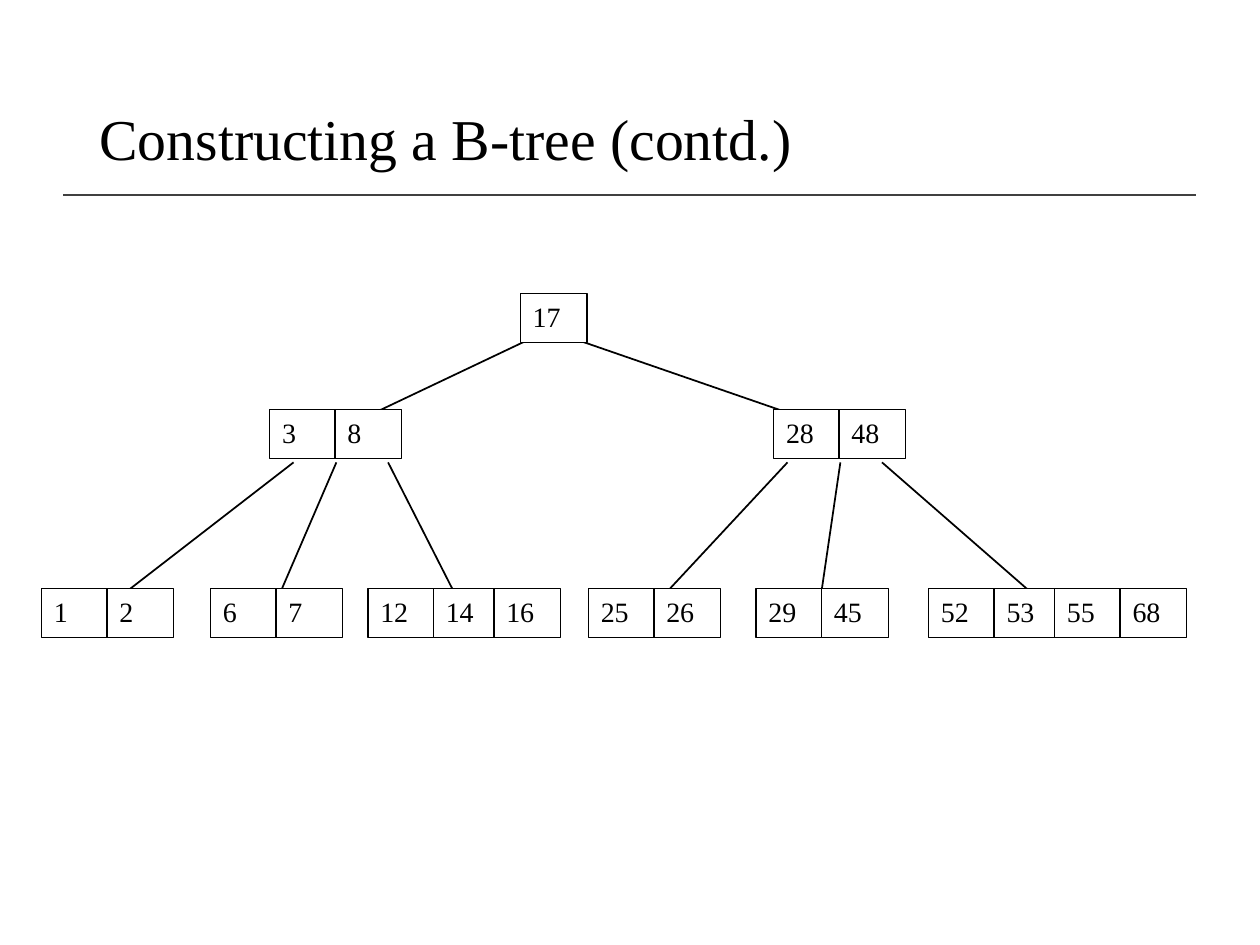
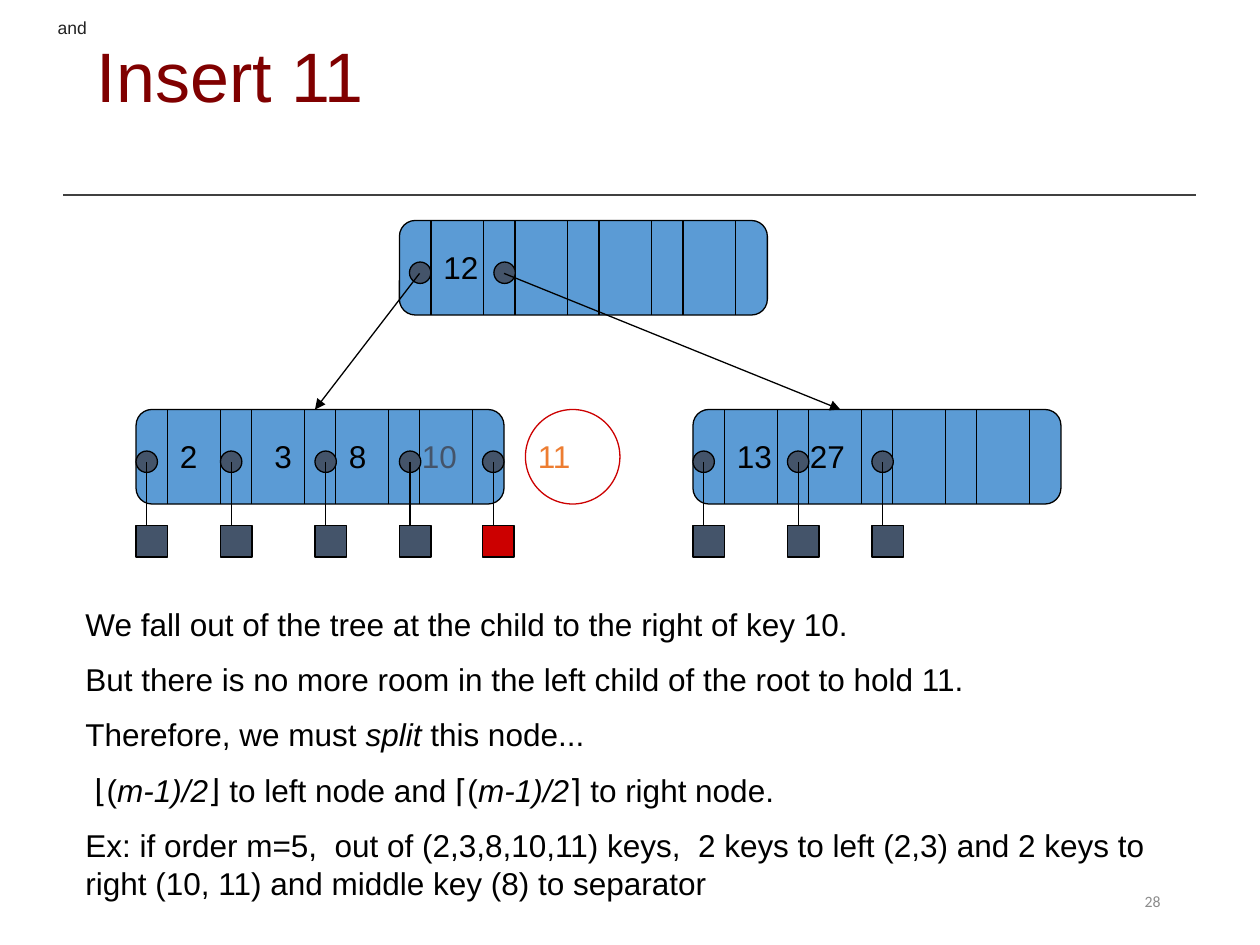
from lxml import etree
from pptx import Presentation
from pptx.dml.color import RGBColor
from pptx.enum.shapes import MSO_CONNECTOR, MSO_SHAPE as SHAPE
from pptx.enum.text import MSO_ANCHOR as ANCHOR, PP_ALIGN as ALIGN
from pptx.oxml.ns import qn
from pptx.util import Inches, Pt

BLACK, WHITE, GREY, RULE = "000000", "FFFFFF", "8C8C8C", "404040"
MAROON, RED, ORANGE = "800000", "CC0000", "ED7D31"
BLUE, SLATE, INK = "5B9BD5", "44546A", "222222"
SERIF, SANS = "Times New Roman", "Arial"

# Slide 1: each node is (left, top, keys); each edge is (x1, y1, x2, y2)
SMALL_NODES = [
    (4.13, 2.33, [17]),
    (2.14, 3.25, [3, 8]),
    (6.14, 3.25, [28, 48]),
    (0.33, 4.67, [1, 2]),
    (1.67, 4.67, [6, 7]),
    (2.92, 4.67, [12, 14, 16]),
    (4.67, 4.67, [25, 26]),
    (6, 4.67, [29, 45]),
    (7.37, 4.67, [52, 53, 55, 68]),
]
LEAF_EDGES = [(2.33, 0.83), (2.67, 2.17), (3.08, 3.67),
              (6.25, 5.17), (6.67, 6.5), (7, 8.33)]
EDGES = ([(4.25, 2.67, 2.67, 3.42), (4.5, 2.67, 6.67, 3.42)]
         + [(start, 3.67, end, 4.83) for start, end in LEAF_EDGES])
CELL_W, CELL_H, CELL_STEP, PAIR_STEP = 0.53, 0.39, 0.52, 1.0

# Slide 2: keys are (offset, text, colour), pointers are offsets in the node
BIG_NODES = [
    {"at": (1.08, 3.25), "leaves": True, "pointers": [0, 0.67, 1.42, 2.09, 2.75],
     "keys": [(0.25, "2", BLACK), (1, "3", BLACK),
              (1.59, "8", BLACK), (2.17, "10", SLATE)]},
    {"at": (3.17, 1.75), "leaves": False, "pointers": [0.08, 0.75],
     "keys": [(0.25, "12", BLACK)]},
    {"at": (5.5, 3.25), "leaves": True, "pointers": [0, 0.75, 1.42],
     "keys": [(0.25, "13", BLACK), (0.83, "27", BLACK)]},
]
RED_LEAF = 3.83
ROOT_ARROWS = [(3.33, 2.17, 2.5, 3.25), (4, 2.17, 6.67, 3.25)]
NODE_W, NODE_H, SLOTS = 2.92, 0.75, 4
DOT, LEAF = 0.17, 0.25

# Paragraphs of (text, italic) runs, with a left margin in inches
NOTES = [
    (0, [("We fall out of the tree at the child to the right of key 10.", False)]),
    (0, [("But there is no more room in the left child of the root to hold 11.", False)]),
    (0, [("Therefore, we must ", False), ("split", True), (" this node...", False)]),
    (0.07, [("⌊(", False), ("m-1)/2", True), ("⌋ to left node and ⌈(", False),
            ("m-1)/2", True), ("⌉ to right node.", False)]),
    (0, [("Ex: if order m=5,  out of (2,3,8,10,11) keys,  2 keys to left (2,3) "
          "and 2 keys to right (10, 11) and middle key (8) to separator", False)]),
]


def rgb(color):
    return RGBColor.from_string(color)


def set_font(p, size, name, color):
    p.font.size, p.font.name = Pt(size), name
    p.font.color.rgb = rgb(color)


def add_line(s, x1, y1, x2, y2, color=BLACK, width=0.75, arrow=False):
    c = s.shapes.add_connector(MSO_CONNECTOR.STRAIGHT, *map(Inches, (x1, y1, x2, y2)))
    c.line.color.rgb, c.line.width = rgb(color), Pt(width)
    if arrow:
        etree.SubElement(c.line._get_or_add_ln(), qn("a:tailEnd"), type="triangle")
    etree.SubElement(c._element.spPr, qn("a:effectLst"))


def add_shape(s, kind, x, y, w, h, fill=None, line=BLACK):
    sp = s.shapes.add_shape(kind, *map(Inches, (x, y, w, h)))
    sp.shadow.inherit = False
    if fill:
        sp.fill.solid()
        sp.fill.fore_color.rgb = rgb(fill)
    else:
        sp.fill.background()
    sp.line.color.rgb, sp.line.width = rgb(line), Pt(0.75)
    return sp


def add_text(s, x, y, w, h, text, size, name, color, wrap=False, anchor=ANCHOR.TOP):
    tf = s.shapes.add_textbox(*map(Inches, (x, y, w, h))).text_frame
    tf.word_wrap, tf.vertical_anchor = wrap, anchor
    p = tf.paragraphs[0]
    p.text = text
    set_font(p, size, name, color)
    return p


def add_slide(prs, title, box, size, name, color):
    """Blank slide with the shared rule and a title."""
    s = prs.slides.add_slide(prs.slide_layouts[6])
    add_line(s, 0.5, 1.55, 9.49, 1.55, RULE, 1)
    p = add_text(s, *box, title, size, name, color, True, ANCHOR.MIDDLE)
    p.line_spacing = 0.9
    return s


def add_small_node(s, left, top, keys):
    for i, key in enumerate(keys):
        x = left + i // 2 * PAIR_STEP + i % 2 * CELL_STEP
        sp = add_shape(s, SHAPE.RECTANGLE, x, top, CELL_W, CELL_H, WHITE)
        tf = sp.text_frame
        tf.vertical_anchor = ANCHOR.TOP
        p = tf.paragraphs[0]
        p.text, p.alignment = str(key), ALIGN.LEFT
        set_font(p, 16, SERIF, BLACK)


def add_key(s, x, y, text, color):
    add_text(s, x, y, 0.36 if len(text) == 1 else 0.51, 0.43, text, 18, SANS, color)


def add_pointer(s, x, y, leaf_color=None):
    add_shape(s, SHAPE.OVAL, x, y, DOT, DOT, SLATE)
    if leaf_color:
        add_line(s, x + DOT / 2, y + DOT / 2, x + DOT / 2, y + 0.75, arrow=True)
        add_shape(s, SHAPE.RECTANGLE, x, y + 0.59, LEAF, LEAF, leaf_color)


def add_big_node(s, node):
    x, y = node["at"]
    add_shape(s, SHAPE.ROUNDED_RECTANGLE, x, y, NODE_W, NODE_H, BLUE)
    for slot in range(SLOTS):
        for offset in (0.25, 0.67):
            divider = x + offset + slot * 2 / 3
            add_line(s, divider, y, divider, y + NODE_H)
    for offset, text, color in node["keys"]:
        add_key(s, x + offset, y + 0.17, text, color)
    for offset in node["pointers"]:
        leaf = RED if round(x + offset, 2) == RED_LEAF else SLATE
        add_pointer(s, x + offset, y + 0.33, leaf if node["leaves"] else None)


def add_notes(s):
    tf = s.shapes.add_textbox(*map(Inches, (0.58, 4.75, 8.92, 2.52))).text_frame
    tf.word_wrap = True
    for i, (margin, runs) in enumerate(NOTES):
        p = tf.add_paragraph() if i else tf.paragraphs[0]
        if margin:
            p._p.get_or_add_pPr().set("marL", str(Inches(margin)))
        if i:
            p.space_before = Pt(10)
        set_font(p, 18, SANS, BLACK)
        for text, italic in runs:
            r = p.add_run()
            r.text, r.font.italic = text, italic


def build_tree_slide(prs):
    s = add_slide(prs, "Constructing a B-tree (contd.)", (0.69, 0.4, 8.62, 1.45),
                  33, SERIF, BLACK)
    for edge in EDGES:
        add_line(s, *edge, width=1)
    for node in SMALL_NODES:
        add_small_node(s, *node)


def build_insert_slide(prs):
    s = add_slide(prs, "Insert 11", (0.67, 0.17, 8.5, 0.92), 40, SANS, MAROON)
    number = add_text(s, 7.06, 6.95, 2.25, 0.4, "28", 9, "Calibri", GREY,
                      True, ANCHOR.MIDDLE)
    number.alignment = ALIGN.RIGHT
    for node in BIG_NODES:
        add_big_node(s, node)
    for arrow in ROOT_ARROWS:
        add_line(s, *arrow, arrow=True)
    add_key(s, 4.17, 3.42, "11", ORANGE)
    add_shape(s, SHAPE.OVAL, 4.17, 3.25, 0.75, 0.75, line=RED)
    add_notes(s)
    add_text(s, 0.36, 0.09, 0.45, 0.26, "and", 10, SANS, INK, anchor=ANCHOR.MIDDLE)


def main():
    prs = Presentation()
    prs.slide_width, prs.slide_height = Inches(10), Inches(7.5)
    build_tree_slide(prs)
    build_insert_slide(prs)
    prs.save("out.pptx")


if __name__ == "__main__":
    main()
